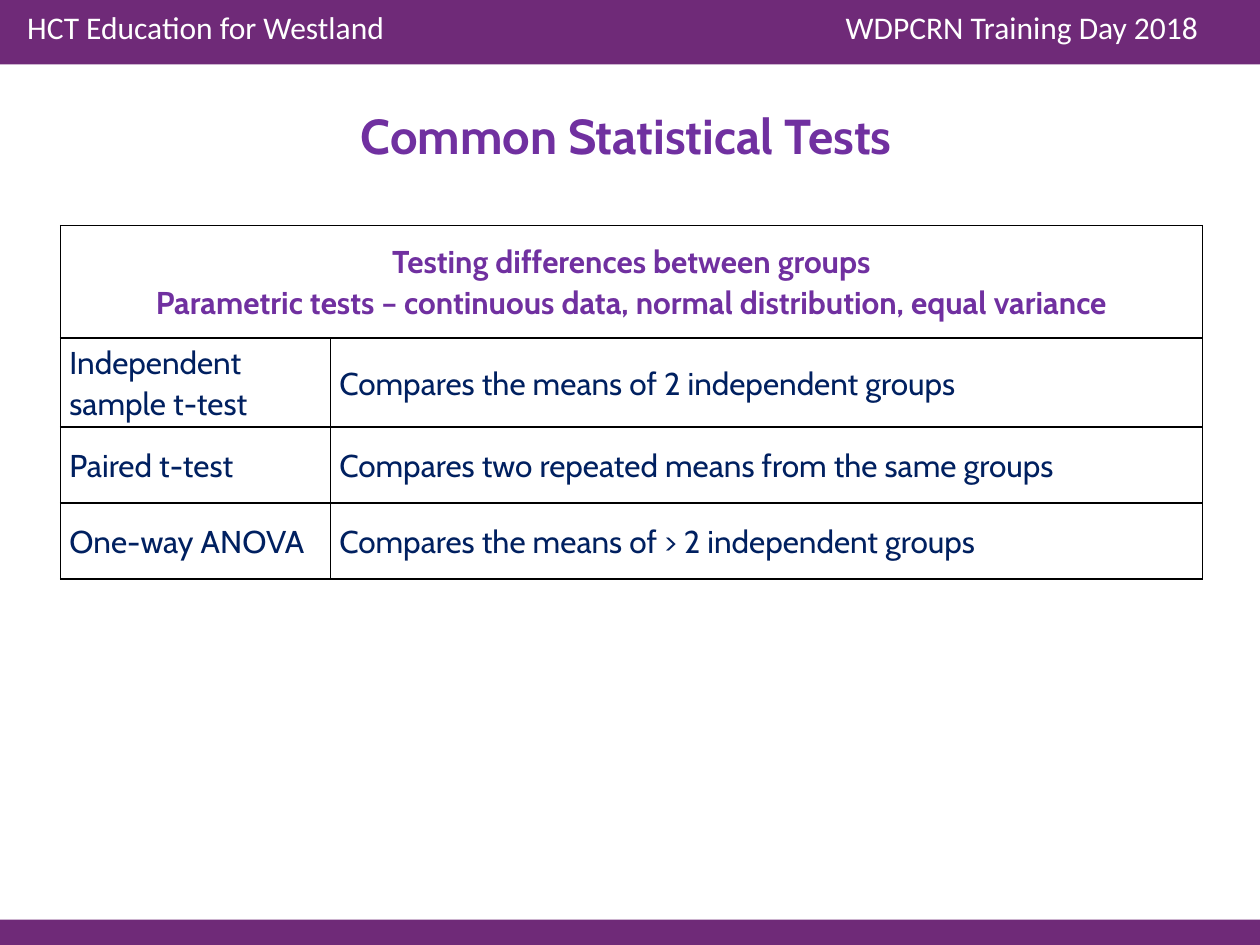
import pptx
import pptx.dml.color
import pptx.enum.shapes
import pptx.enum.text
import pptx.oxml
import pptx.oxml.ns
import pptx.util
from pptx.util import Cm

ALIGN = pptx.enum.text.PP_ALIGN
ANCHOR = pptx.enum.text.MSO_ANCHOR


def colour(value):
    return pptx.dml.color.RGBColor.from_string(value)


def set_values(target, values):
    for name, value in values.items():
        setattr(target, name, value)


class SlideBuilder:
    """Draws styled elements on the current slide."""

    band = "6F2A78"
    heading = {"name": "Cabin", "bold": True, "colour": "7030A0"}
    body = {"name": "Cabin", "bold": False, "colour": "002060"}
    header = {"name": "Calibri", "bold": False, "colour": "FFFFFF"}
    cell_format = {
        "vertical_anchor": ANCHOR.MIDDLE,
        "margin_left": Cm(0.18), "margin_right": Cm(0.18),
        "margin_top": 0, "margin_bottom": 0,
    }
    heading_spacing = {"alignment": ALIGN.CENTER, "line_spacing": 1.07}
    body_spacing = {
        "alignment": ALIGN.LEFT, "line_spacing": 1.07,
        "space_before": pptx.util.Pt(6), "space_after": pptx.util.Pt(6),
    }

    def __init__(self, slide):
        self.slide = slide

    def add_band(self, top, height):
        shape = self.slide.shapes.add_shape(
            pptx.enum.shapes.MSO_SHAPE.RECTANGLE, 0, Cm(top), Cm(25.4), Cm(height))
        shape.shadow.inherit = False
        shape.fill.solid()
        shape.fill.fore_color.rgb = colour(self.band)
        shape.line.fill.background()

    def fill_text(self, text_frame, lines, style, size, spacing):
        for index, line in enumerate(lines):
            paragraph = text_frame.add_paragraph() if index else text_frame.paragraphs[0]
            set_values(paragraph, spacing)
            run = paragraph.add_run()
            run.text = line
            set_values(run.font, {"name": style["name"], "bold": style["bold"],
                                  "size": pptx.util.Pt(size)})
            run.font.color.rgb = colour(style["colour"])

    def add_text(self, text, box, style, size, alignment):
        shape = self.slide.shapes.add_textbox(*map(Cm, box))
        shape.text_frame.word_wrap = True
        self.fill_text(shape.text_frame, [text], style, size, {"alignment": alignment})

    def add_borders(self, cell):
        properties = cell._tc.get_or_add_tcPr()
        for index, side in enumerate(("lnL", "lnR", "lnT", "lnB")):
            properties.insert(index, pptx.oxml.parse_xml(
                f'<a:{side} {pptx.oxml.ns.nsdecls("a")} w="12700"><a:solidFill>'
                f'<a:srgbClr val="000000"/></a:solidFill></a:{side}>'))

    def add_table(self, title_lines, rows, position, widths, heights):
        table = self.slide.shapes.add_table(
            len(heights), len(widths), *map(Cm, position),
            Cm(sum(widths)), Cm(sum(heights))).table
        set_values(table, {"first_row": False, "horz_banding": False})
        for column, width in zip(table.columns, widths):
            column.width = Cm(width)
        for row, height in zip(table.rows, heights):
            row.height = Cm(height)
        for cell in table.iter_cells():
            set_values(cell, self.cell_format)
            cell.fill.background()
            self.add_borders(cell)
        title_cell = table.cell(0, 0)
        title_cell.merge(table.cell(0, len(widths) - 1))
        self.fill_text(title_cell.text_frame, title_lines, self.heading, 18,
                       self.heading_spacing)
        for row_index, row in enumerate(rows, 1):
            for column_index, text in enumerate(row):
                self.fill_text(table.cell(row_index, column_index).text_frame, [text],
                               self.body, 18, self.body_spacing)


def main():
    presentation = pptx.Presentation()
    set_values(presentation, {"slide_width": Cm(25.4), "slide_height": Cm(19.05)})
    builder = SlideBuilder(presentation.slides.add_slide(presentation.slide_layouts[6]))
    builder.add_band(0, 1.3)
    builder.add_band(18.54, 0.51)
    builder.add_text("HCT Education for Westland", (0.3, 0.03, 12, 1.02),
                     builder.header, 18, ALIGN.LEFT)
    builder.add_text("WDPCRN Training Day 2018", (16.8, 0.03, 8.3, 1.02),
                     builder.header, 18, ALIGN.LEFT)
    builder.add_text("Common Statistical Tests", (1.22, 2.01, 22.81, 1.93),
                     builder.heading, 28, ALIGN.CENTER)
    builder.add_table(
        ["Testing differences between groups",
         "Parametric tests – continuous data, normal distribution, equal variance"],
        [("Independent sample t-test", "Compares the means of 2 independent groups"),
         ("Paired t-test", "Compares two repeated means from the same groups"),
         ("One-way ANOVA", "Compares the means of > 2 independent groups")],
        (1.22, 4.55), (5.44, 17.58), (2.26, 1.8, 1.53, 1.53))
    presentation.save("out.pptx")


if __name__ == "__main__":
    main()
